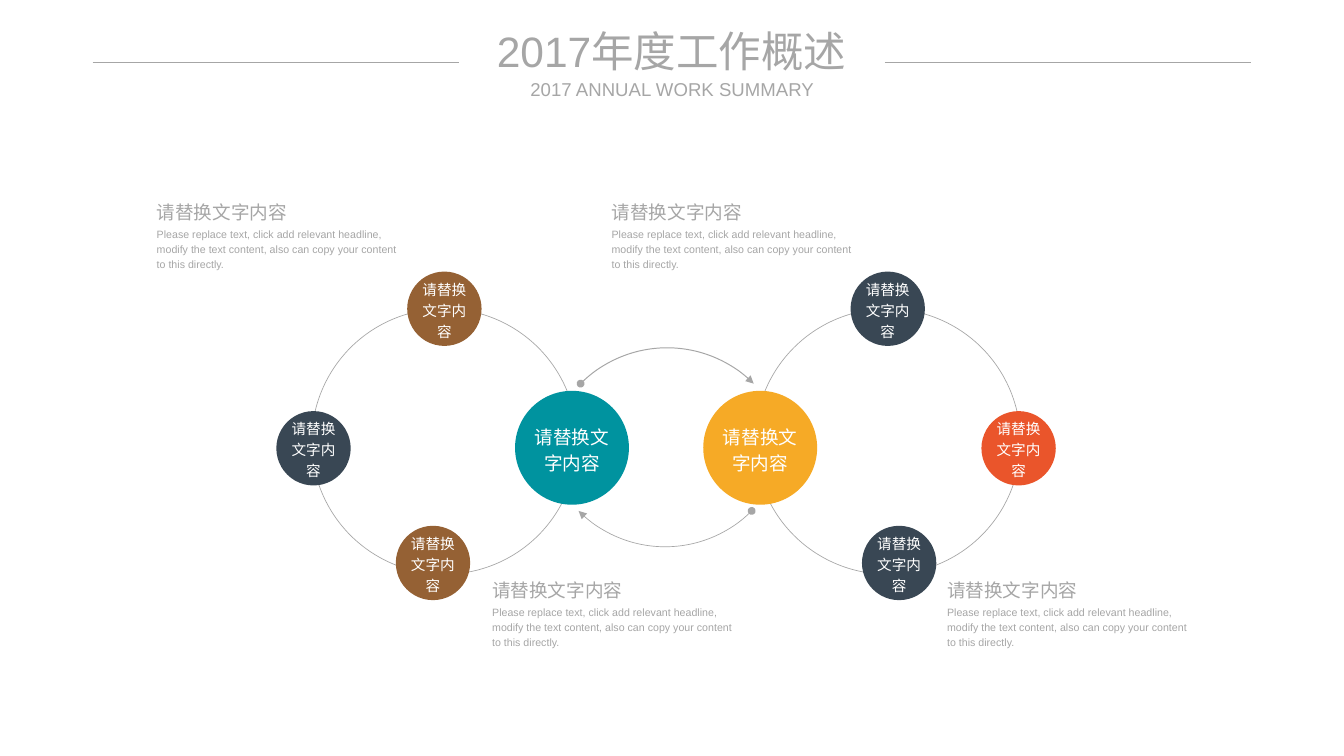
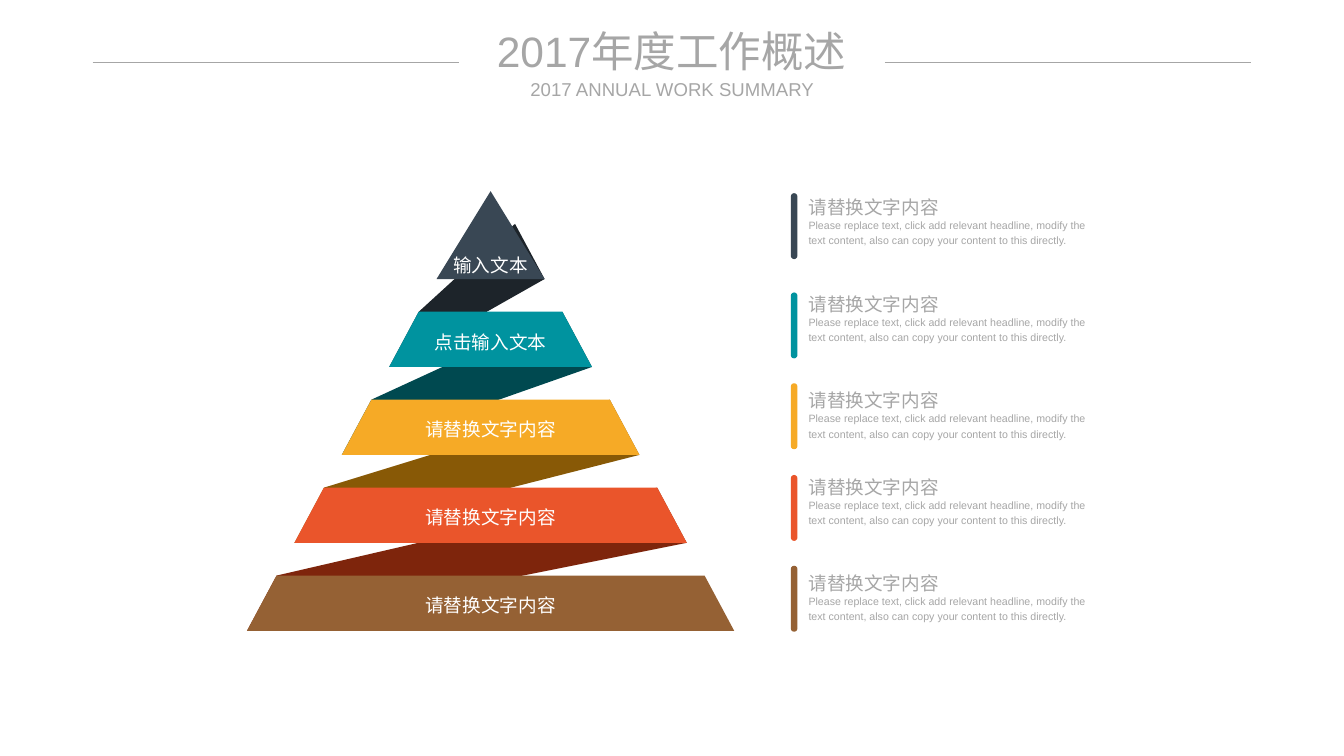
from lxml.etree import SubElement
from pptx import Presentation
from pptx.dml.color import RGBColor
from pptx.enum.shapes import MSO_CONNECTOR, MSO_SHAPE
from pptx.enum.text import MSO_ANCHOR, MSO_AUTO_SIZE, PP_ALIGN
from pptx.oxml.ns import qn
from pptx.util import Pt

COLOURS = {
    "grey": "A6A6A6", "white": "FFFFFF",
    "slate": "394754", "teal": "00939F", "amber": "F6AA26",
    "orange": "EA552B", "brown": "956134",
    "slate fold": "1D242A", "teal fold": "004950",
    "amber fold": "885906", "orange fold": "7E250C",
}
FONT = "Arial"
SLIDE_WIDTH, SLIDE_HEIGHT = 1012.5, 569.5

TITLE = "2017年度工作概述"
SUBTITLE = "2017 ANNUAL WORK SUMMARY"
HEADING = "请替换文字内容"
BODY = ("Please replace text, click add relevant headline, modify the text content, "
        "also can copy your content to this directly.")

# Left loop; the right loop mirrors it
MIRROR_X = 501.8
RING = (334.8, 332.6, 200)  # centre x, centre y, diameter
NODES = [  # centre x, centre y, diameter, text size, left colour, right colour
    (430.9, 337.3, 85.8, 14, "teal", "amber"),
    (236.2, 337.7, 56, 11, "slate", "orange"),
    (334.8, 232.6, 56, 11, "brown", "slate"),
    (326.2, 424.1, 56, 11, "brown", "slate"),
]
ARCS = [  # centre x, centre y, start angle, end angle, line width
    (502.6, 354.2, 225, 315, 0.75),
    (501.1, 319.7, 45, 135, 0.5),
]
ARC_DIAMETER = 184.4
LOOP_CARDS = [(370.8, 432.8), (713.5, 432.8), (118.1, 148.2), (460.8, 148.2)]

LEVELS = [  # colour, band text, bar top, card top
    ("slate", "输入文本", 145.5, 144),
    ("teal", "点击输入文本", 220.3, 217.3),
    ("amber", HEADING, 288.7, 290),
    ("orange", HEADING, 357.8, 355),
    ("brown", HEADING, 426.2, 427.7),
]
PYRAMID_X, APEX_Y = 369.6, 144
FIRST_BASE, BASE_STEP, BAND_HEIGHT = 210.2, 66.25, 41.6
FIRST_HALF, HALF_STEP, BAND_TAPER = 40.7, 35.7, 22.3


def colour(name):
    return RGBColor.from_string(COLOURS[name])


def write(shape, text, size, text_colour="grey", align=PP_ALIGN.CENTER,
          anchor=MSO_ANCHOR.MIDDLE, spacing=1.2):
    frame = shape.text_frame
    frame.text = text
    frame.word_wrap = True
    frame.auto_size = MSO_AUTO_SIZE.NONE
    frame.vertical_anchor = anchor
    frame.margin_left = frame.margin_top = frame.margin_right = frame.margin_bottom = 0
    paragraph = frame.paragraphs[0]
    paragraph.alignment = align
    paragraph.line_spacing = spacing
    font = paragraph.runs[0].font
    font.name, font.size = FONT, Pt(size)
    font.color.rgb = colour(text_colour)


def add_text(slide, left, top, width, height, text, size, **style):
    box = slide.shapes.add_textbox(Pt(left), Pt(top), Pt(width), Pt(height))
    write(box, text, size, **style)


def paint(shape, fill=None, line_width=None):
    shape.shadow.inherit = False
    if fill:
        shape.fill.solid()
        shape.fill.fore_color.rgb = colour(fill)
    else:
        shape.fill.background()
    if line_width:
        shape.line.color.rgb = colour("grey")
        shape.line.width = Pt(line_width)
    else:
        shape.line.fill.background()


def add_round(slide, kind, centre_x, centre_y, diameter, **style):
    """Add a circle or arc placed by its centre."""
    shape = slide.shapes.add_shape(
        kind, Pt(centre_x - diameter / 2), Pt(centre_y - diameter / 2),
        Pt(diameter), Pt(diameter))
    paint(shape, **style)
    return shape


def add_polygon(slide, points, fill):
    corners = [(Pt(x), Pt(y)) for x, y in points]
    builder = slide.shapes.build_freeform(*corners[0])
    builder.add_line_segments(corners[1:], close=True)
    shape = builder.convert_to_shape()
    paint(shape, fill)
    return shape


def add_card(slide, left, top, width, body_offset):
    style = {"align": PP_ALIGN.LEFT, "anchor": MSO_ANCHOR.TOP}
    add_text(slide, left, top, width, 20, HEADING, 14, **style)
    add_text(slide, left, top + body_offset, width, 35, BODY, 8, **style)


def add_titled_slide(presentation):
    slide = presentation.slides.add_slide(presentation.slide_layouts[5])
    title = slide.shapes.title
    title.left, title.top, title.width, title.height = Pt(350.6), Pt(18.7), Pt(311), Pt(39)
    write(title, TITLE, 32, spacing=1.0)
    add_text(slide, 396, 58.3, 221, 17.3, SUBTITLE, 14, spacing=1.0)
    for start, end in [(69.8, 345.6), (666.7, 942.5)]:
        rule = slide.shapes.add_connector(
            MSO_CONNECTOR.STRAIGHT, Pt(start), Pt(46.8), Pt(end), Pt(46.8))
        rule.line.color.rgb = colour("grey")
        rule.line.width = Pt(0.5)
        SubElement(rule.element.spPr, qn("a:effectLst"))
    return slide


def build_loops(presentation):
    slide = add_titled_slide(presentation)
    for side in (0, 1):
        def place(x):
            return 2 * MIRROR_X - x if side else x

        ring_x, ring_y, ring_diameter = RING
        add_round(slide, MSO_SHAPE.OVAL, place(ring_x), ring_y, ring_diameter, line_width=0.5)
        for x, y, diameter, size, *fills in NODES:
            node = add_round(slide, MSO_SHAPE.OVAL, place(x), y, diameter, fill=fills[side])
            write(node, HEADING, size, "white")

    for x, y, start, end, width in ARCS:
        arc = add_round(slide, MSO_SHAPE.ARC, x, y, ARC_DIAMETER, line_width=width)
        # Angles are stored in 60000ths of a degree, adjustments in 100000ths
        arc.adjustments[0], arc.adjustments[1] = start * 0.6, end * 0.6
        line = arc.line._get_or_add_ln()
        SubElement(line, qn("a:headEnd"), type="oval")
        SubElement(line, qn("a:tailEnd"), type="triangle")

    for left, top in LOOP_CARDS:
        add_card(slide, left, top, 186, 21.4)


def band_edges(index):
    """Return top, base, half width at the top and half width at the base."""
    base = FIRST_BASE + index * BASE_STEP
    half = FIRST_HALF + index * HALF_STEP
    return base - BAND_HEIGHT, base, half - BAND_TAPER, half


def build_pyramid(presentation):
    slide = add_titled_slide(presentation)
    for index, (name, *_) in enumerate(LEVELS[:-1]):
        top, base, half_top, half_base = band_edges(index)
        next_top, next_base, next_half_top, next_half_base = band_edges(index + 1)
        add_polygon(slide, [
            (PYRAMID_X + half_top, top), (PYRAMID_X - next_half_top, next_top),
            (PYRAMID_X - next_half_base, next_base), (PYRAMID_X + half_base, base),
        ], name + " fold")

    for index, (name, text, bar_top, card_top) in enumerate(LEVELS):
        top, base, half_top, half_base = band_edges(index)
        is_tip = index == 0
        upper = [(PYRAMID_X, APEX_Y)] if is_tip else [
            (PYRAMID_X - half_top, top), (PYRAMID_X + half_top, top)]
        band = add_polygon(slide, upper + [
            (PYRAMID_X + half_base, base), (PYRAMID_X - half_base, base)], name)
        write(band, text, 14, "white",
              anchor=MSO_ANCHOR.BOTTOM if is_tip else MSO_ANCHOR.MIDDLE)
        if is_tip:
            band.text_frame.margin_bottom = Pt(2)

        bar = slide.shapes.add_shape(
            MSO_SHAPE.ROUND_2_SAME_RECTANGLE, Pt(595.8), Pt(bar_top), Pt(5), Pt(49.7))
        bar.adjustments[0] = bar.adjustments[1] = 0.5
        paint(bar, name)
        add_card(slide, 609.1, card_top, 212.4, 18.7)


def main():
    presentation = Presentation()
    presentation.slide_width = Pt(SLIDE_WIDTH)
    presentation.slide_height = Pt(SLIDE_HEIGHT)
    build_loops(presentation)
    build_pyramid(presentation)
    presentation.save("out.pptx")


if __name__ == "__main__":
    main()
